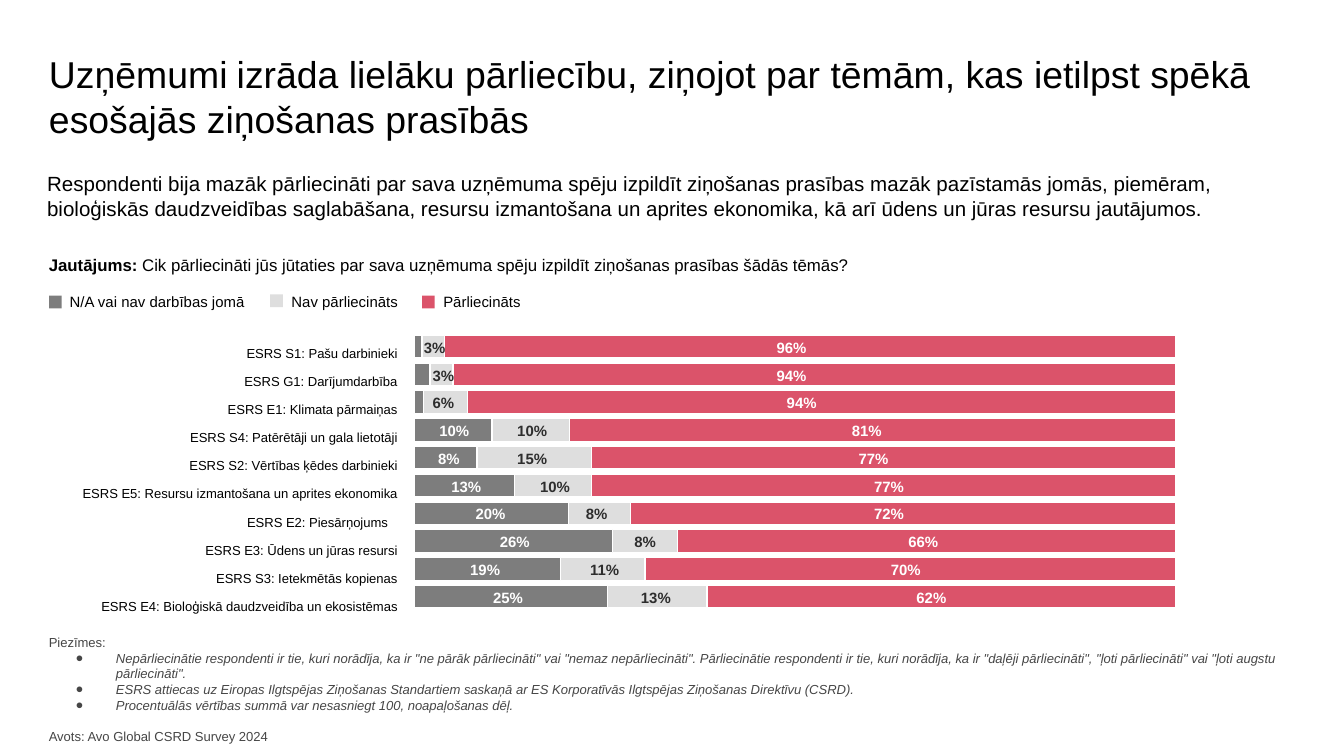
from pptx import Presentation
from pptx.dml.color import RGBColor
from pptx.enum.shapes import MSO_SHAPE
from pptx.enum.text import MSO_ANCHOR, PP_ALIGN
from pptx.oxml.ns import qn
from pptx.util import Inches, Pt
from lxml import etree

RECTANGLE = MSO_SHAPE.RECTANGLE
TOP, MIDDLE = MSO_ANCHOR.TOP, MSO_ANCHOR.MIDDLE
LEFT, CENTER, RIGHT = PP_ALIGN.LEFT, PP_ALIGN.CENTER, PP_ALIGN.RIGHT

BLACK = RGBColor(0x00, 0x00, 0x00)
WHITE = RGBColor(0xFF, 0xFF, 0xFF)
CHARCOAL = RGBColor(0x2D, 0x2D, 0x2D)
NOTE_GRAY = RGBColor(0x46, 0x46, 0x46)
GRAY = RGBColor(0x7D, 0x7D, 0x7D)
LIGHT_GRAY = RGBColor(0xDE, 0xDE, 0xDE)
ROSE = RGBColor(0xDB, 0x53, 0x6A)

BAR_LEFT, BAR_TOP, BAR_WIDTH, BAR_HEIGHT = 30.8, 24.95, 56.7, 1.7
BAR_PITCH = 18.6 / 9
LABEL_RISE, LABEL_WIDTH, LABEL_HEIGHT = 0.4, 4.8, 2.4

TOPICS = [
    ("ESRS S1: Pašu darbinieki", 0.6, 2.3, ("", 0), ("3%", 29.95), ("96%", 56.5)),
    ("ESRS G1: Darījumdarbība", 1.2, 2.9, ("", 0), ("3%", 30.6), ("94%", 56.5)),
    ("ESRS E1: Klimata pārmaiņas", 0.7, 4, ("", 0), ("6%", 30.6), ("94%", 57.25)),
    ("ESRS S4: Patērētāji un gala lietotāji", 5.8, 11.6, ("10%", 31.4), ("10%", 37.2), ("81%", 62.1)),
    ("ESRS S2: Vērtības ķēdes darbinieki", 4.7, 13.2, ("8%", 31), ("15%", 37.2), ("77%", 62.6)),
    ("ESRS E5: Resursu izmantošana un aprites ekonomika", 7.5, 13.2, ("13%", 32.3), ("10%", 38.9), ("77%", 63.75)),
    ("ESRS E2: Piesārņojums", 11.5, 16.1, ("20%", 34.1), ("8%", 42), ("72%", 63.75)),
    ("ESRS E3: Ūdens un jūras resursi", 14.8, 19.6, ("26%", 35.9), ("8%", 45.6), ("66%", 66.3)),
    ("ESRS S3: Ietekmētās kopienas", 10.9, 17.2, ("19%", 33.7), ("11%", 42.6), ("70%", 65)),
    ("ESRS E4: Bioloģiskā daudzveidība un ekosistēmas", 14.4, 21.8, ("25%", 35.4), ("13%", 46.4), ("62%", 66.9)),
]
INDENTED_TOPIC = "ESRS E2: Piesārņojums"

LEGEND = [
    (GRAY, 3.65, 22, "N/A vai nav darbības jomā", 4.2, 16.9),
    (LIGHT_GRAY, 20.1, 21.9, "Nav pārliecināts", 20.7, 10.3),
    (ROSE, 31.4, 22, "Pārliecināts", 32, 9),
]

NOTES = [
    'Nepārliecinātie respondenti ir tie, kuri norādīja, ka ir "ne pārāk pārliecināti" vai "nemaz nepārliecināti". '
    'Pārliecinātie respondenti ir tie, kuri norādīja, ka ir "daļēji pārliecināti", "ļoti pārliecināti" '
    'vai "ļoti augstu pārliecināti".',
    "ESRS attiecas uz Eiropas Ilgtspējas Ziņošanas Standartiem saskaņā ar ES Korporatīvās Ilgtspējas "
    "Ziņošanas Direktīvu (CSRD).",
    "Procentuālās vērtības summā var nesasniegt 100, noapaļošanas dēļ.",
]


class SlideBuilder:
    """Draws styled elements on a 16:9 grid of 100 columns with square cells."""

    def __init__(self):
        self.presentation = Presentation()
        self.presentation.slide_width = Inches(10)
        self.presentation.slide_height = self.presentation.slide_width * 9 // 16
        self.cell = self.presentation.slide_width / 100
        self.slide = self.presentation.slides.add_slide(self.presentation.slide_layouts[6])

    def grid(self, *lengths):
        return [round(length * self.cell) for length in lengths]

    def apply(self, target, values):
        for name, value in values.items():
            setattr(target, name, value)

    def rectangle(self, box, color, outlined=False):
        shape = self.slide.shapes.add_shape(RECTANGLE, *self.grid(*box))
        shape.shadow.inherit = False
        shape.fill.solid()
        shape.fill.fore_color.rgb = color
        if outlined:
            shape.line.color.rgb = WHITE
            shape.line.width = Pt(0.75)
        else:
            shape.line.fill.background()

    def text_box(self, box, insets=(1, 1, 1, 1), anchor=TOP):
        frame = self.slide.shapes.add_textbox(*self.grid(*box)).text_frame
        left, top, right, bottom = self.grid(*insets)
        self.apply(frame, {"word_wrap": True, "vertical_anchor": anchor, "margin_left": left,
                           "margin_top": top, "margin_right": right, "margin_bottom": bottom})
        return frame

    def paragraph(self, frame, runs, size, color=BLACK, indent=0, hanging=0, bullet=None, **layout):
        paragraph = frame.paragraphs[0]
        if paragraph.runs:
            paragraph = frame.add_paragraph()
        self.apply(paragraph, layout)
        properties = paragraph._p.get_or_add_pPr()
        margin, first_line = self.grid(indent, hanging)
        properties.set("marL", str(margin))
        properties.set("indent", str(first_line))
        if bullet:
            bullet_color = etree.SubElement(properties, qn("a:buClr"))
            etree.SubElement(bullet_color, qn("a:srgbClr"), val=str(color))
            etree.SubElement(properties, qn("a:buSzPts"), val=str(size * 100))
            etree.SubElement(properties, qn("a:buFont"), typeface="Arial")
            etree.SubElement(properties, qn("a:buChar"), char=bullet)
        for text, changes in runs:
            run = paragraph.add_run()
            run.text = text
            self.apply(run.font, {"name": "Arial", "size": Pt(size), **changes})
            run.font.color.rgb = color

    def value_label(self, text, left, top, color):
        frame = self.text_box((left, top, LABEL_WIDTH, LABEL_HEIGHT), anchor=MIDDLE)
        self.paragraph(frame, [(text, {"bold": True})], 8, color, alignment=CENTER, line_spacing=1.15)

    def bar(self, row, gray_end, light_end, labels):
        top = BAR_TOP + row * BAR_PITCH
        for width, color in ((BAR_WIDTH, ROSE), (light_end, LIGHT_GRAY), (gray_end, GRAY)):
            self.rectangle((BAR_LEFT, top, width, BAR_HEIGHT), color, outlined=True)
        for (text, left), color in zip(labels, (WHITE, CHARCOAL, WHITE)):
            if text:
                self.value_label(text, left, top - LABEL_RISE, color)

    def legend_entry(self, color, left, top, text, text_left, text_width):
        self.rectangle((left, top, 0.95, 0.95), color)
        frame = self.text_box((text_left, 20.8, text_width, 2.6), insets=(1, 1, 1, 0))
        self.paragraph(frame, [(text, {})], 8)


def main():
    builder = SlideBuilder()

    title = builder.text_box((3.65, 3.5, 92.7, 5.2), insets=(0, 0, 0, 0))
    builder.paragraph(title, [
        ("Uzņēmumi", {}),
        (" ", {"name": "Cambria", "size": Pt(22)}),
        ("izrāda lielāku pārliecību, ziņojot par tēmām, kas ietilpst spēkā esošajās ziņošanas prasībās", {}),
    ], 20, line_spacing=1.0)

    summary = builder.text_box((3.5, 11.75, 88.9, 6), insets=(0, 1, 1, 1))
    builder.paragraph(summary, [(
        "Respondenti bija mazāk pārliecināti par sava uzņēmuma spēju izpildīt ziņošanas prasības mazāk "
        "pazīstamās jomās, piemēram, bioloģiskās daudzveidības saglabāšana, resursu izmantošana un aprites "
        "ekonomika, kā arī ūdens un jūras resursu jautājumos.", {})], 11)

    question = builder.text_box((2.65, 17.7, 77.3, 3.5), insets=(1, 1, 1, 0))
    builder.paragraph(question, [
        ("Jautājums: ", {"bold": True}),
        ("Cik pārliecināti jūs jūtaties par sava uzņēmuma spēju izpildīt ziņošanas prasības šādās tēmās?", {}),
    ], 9, line_spacing=1.15)

    for entry in LEGEND:
        builder.legend_entry(*entry)

    topics = builder.text_box((2.65, 23.75, 27.9, 24.4))
    for row, (topic, gray_end, light_end, *labels) in enumerate(TOPICS):
        builder.bar(row, gray_end, light_end, labels)
        indented = topic == INDENTED_TOPIC
        builder.paragraph(topics, [(topic, {})], 7, indent=14.75 if indented else 0,
                          alignment=LEFT if indented else RIGHT, line_spacing=1.8)

    notes = builder.text_box((2.65, 46.2, 93.7, 5.2), insets=(1, 1, 1, 0))
    builder.paragraph(notes, [("Piezīmes:", {})], 7, NOTE_GRAY)
    for note in NOTES:
        builder.paragraph(notes, [(note, {"italic": True})], 7, NOTE_GRAY, indent=5, hanging=-3, bullet="●")
    builder.paragraph(notes, [("Avots: Avo Global CSRD Survey 2024", {})], 7, NOTE_GRAY, space_before=Pt(8.4))

    builder.presentation.save("out.pptx")


if __name__ == "__main__":
    main()
